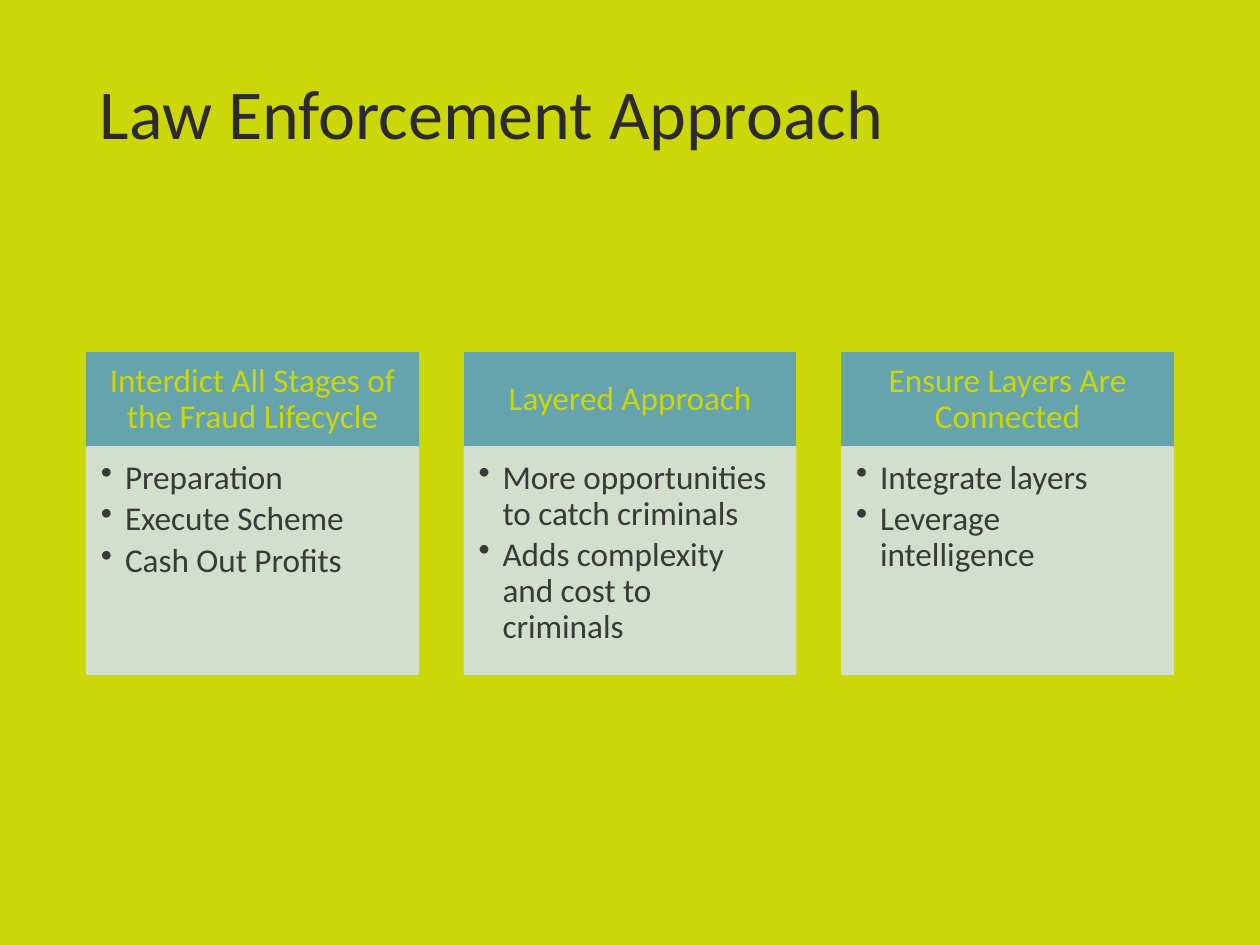
import dataclasses

import pptx
import pptx.dml.color
import pptx.enum.shapes
import pptx.enum.text
import pptx.oxml
import pptx.oxml.ns
import pptx.util

SCALE = 914400 / 126  # EMU per px
FONT = "Calibri"
LIME, TEAL, MIST = "CCD707", "65A3AD", "D3E0E3"
INK, GREY = "2C2A2A", "3A3838"
LEFT, RIGHT, WIDTH = 87, 1173, 331
TOP, HEAD, BODY = 353, 94, 227
INDENT = 24


@dataclasses.dataclass
class Card:
    title: str
    points: list[str]


CARDS = [
    Card("Interdict All Stages of the Fraud Lifecycle",
         ["Preparation", "Execute Scheme", "Cash Out Profits"]),
    Card("Layered Approach",
         ["More opportunities to catch criminals",
          "Adds complexity and cost to criminals"]),
    Card("Ensure Layers Are Connected",
         ["Integrate layers", "Leverage intelligence"]),
]


def px(value: float) -> int:
    return round(value * SCALE)


def color(code: str) -> pptx.dml.color.RGBColor:
    return pptx.dml.color.RGBColor.from_string(code)


def paint(fill, code: str, alpha: int = 100) -> None:
    fill.solid()
    fill.fore_color.rgb = color(code)
    if alpha < 100:
        tag = pptx.oxml.parse_xml(
            f'<a:alpha {pptx.oxml.ns.nsdecls("a")} val="{alpha * 1000}"/>')
        # The colour element sits inside the solid fill
        fill._xPr.find(pptx.oxml.ns.qn("a:solidFill"))[0].append(tag)


def bullet(para) -> None:
    para.level = 1
    props = para._p.get_or_add_pPr()
    props.set("marL", str(px(INDENT)))
    props.set("indent", str(-px(INDENT)))
    props.append(pptx.oxml.parse_xml(
        f'<a:buChar {pptx.oxml.ns.nsdecls("a")} char="•"/>'))


def write(shape, lines: list[str], *, size: int, code: str, align: str = "LEFT",
          anchor: str = "MIDDLE", inset: tuple = (13, 6, 13, 6),
          after: int = 0, dots: bool = False) -> None:
    frame = shape.text_frame
    frame.word_wrap = True
    frame.vertical_anchor = pptx.enum.text.MSO_ANCHOR[anchor]
    (frame.margin_left, frame.margin_top,
     frame.margin_right, frame.margin_bottom) = map(px, inset)
    for i, line in enumerate(lines):
        para = frame.add_paragraph() if i else frame.paragraphs[0]
        para.alignment = pptx.enum.text.PP_ALIGN[align]
        para.line_spacing = 0.9
        para.space_after = pptx.util.Pt(after)
        if dots:
            bullet(para)
        run = para.add_run()
        run.text = line
        run.font.name = FONT
        run.font.size = pptx.util.Pt(size)
        run.font.color.rgb = color(code)


def block(slide, left: float, top: int, height: int, code: str, alpha: int = 100):
    shape = slide.shapes.add_shape(
        pptx.enum.shapes.MSO_SHAPE.RECTANGLE,
        px(left), px(top), px(WIDTH), px(height))
    shape.shadow.inherit = False
    paint(shape.fill, code, alpha)
    paint(shape.line.fill, code, alpha)
    shape.line.width = pptx.util.Pt(1)
    return shape


def draw(slide, card: Card, left: float) -> None:
    head = block(slide, left, TOP, HEAD, TEAL)
    write(head, [card.title], size=19, code=LIME, align="CENTER",
          inset=(19, 10, 19, 10))
    body = block(slide, left, TOP + HEAD, BODY, MIST, 90)
    write(body, card.points, size=19, code=GREY, anchor="TOP",
          inset=(14, 14, 19, 21), after=3, dots=True)


def main() -> None:
    deck = pptx.Presentation()
    deck.slide_width, deck.slide_height = px(1260), px(945)
    slide = deck.slides.add_slide(deck.slide_layouts[6])
    paint(slide.background.fill, LIME)

    # Title
    title = slide.shapes.add_textbox(px(LEFT), px(50), px(RIGHT - LEFT), px(134))
    write(title, ["Law Enforcement Approach"], size=40, code=INK)

    # Cards spread evenly between the margins
    step = (RIGHT - LEFT - WIDTH) / (len(CARDS) - 1)
    for i, card in enumerate(CARDS):
        draw(slide, card, LEFT + i * step)

    deck.save("out.pptx")


if __name__ == "__main__":
    main()
